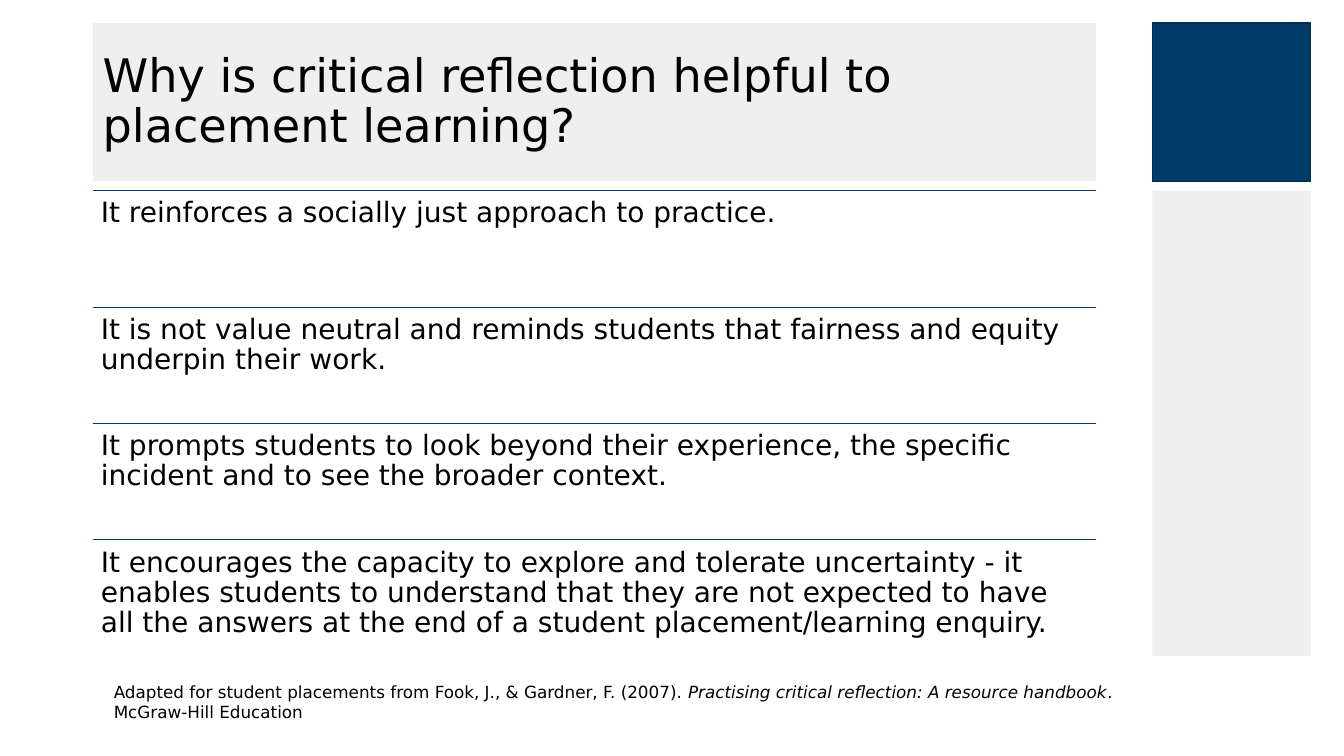
"""Build a slide on why critical reflection helps placement learning."""
from dataclasses import dataclass

from lxml.etree import SubElement
from pptx import Presentation
from pptx.dml.color import RGBColor
from pptx.enum.shapes import MSO_CONNECTOR as Connector, MSO_SHAPE as Preset
from pptx.enum.text import MSO_ANCHOR as Anchor
from pptx.oxml.ns import qn
from pptx.slide import Slide
from pptx.util import Inches, Pt

COLOURS = {"navy": "003C69", "edge": "002C4E", "grey": "EFEFF0", "text": "000000"}
FONT = "DejaVu Sans"
LEFT, WIDTH = 0.92, 9.95
PANEL_LEFT, PANEL_WIDTH = 11.43, 1.57
HEADER_TOP, HEADER_HEIGHT = 0.23, 1.57
BODY_TOP, BODY_HEIGHT = 1.89, 4.62


@dataclass(frozen=True)
class Area:
    left: float
    top: float
    width: float
    height: float

    def lengths(self) -> tuple[Inches, ...]:
        return tuple(Inches(n) for n in (self.left, self.top, self.width, self.height))


@dataclass(frozen=True)
class Panel:
    area: Area
    fill: str
    edge: str | None = None


@dataclass(frozen=True)
class Span:
    text: str
    italic: bool = False


@dataclass(frozen=True)
class TextBlock:
    area: Area
    spans: tuple[Span, ...]
    size: float
    spacing: float = 1.0
    inset: float | None = None
    anchor: Anchor = Anchor.TOP


PANELS = (
    Panel(Area(PANEL_LEFT, BODY_TOP, PANEL_WIDTH, BODY_HEIGHT), "grey"),
    Panel(Area(PANEL_LEFT, HEADER_TOP, PANEL_WIDTH, HEADER_HEIGHT), "navy", "edge"),
    Panel(Area(LEFT, HEADER_TOP, WIDTH, HEADER_HEIGHT), "grey"),
)
TITLE = TextBlock(
    Area(LEFT, HEADER_TOP, WIDTH, HEADER_HEIGHT),
    (Span("Why is critical reflection helpful to placement learning?"),),
    size=33, spacing=0.9, anchor=Anchor.MIDDLE,
)
REASONS = (
    "It reinforces a socially just approach to practice.",
    "It is not value neutral and reminds students that fairness and equity underpin their work.",
    "It prompts students to look beyond their experience, the specific incident "
    "and to see the broader context.",
    "It encourages the capacity to explore and tolerate uncertainty - it enables students "
    "to understand that they are not expected to have all the answers at the end of "
    "a student placement/learning enquiry.",
)
REFERENCE = TextBlock(
    Area(1.03, 6.71, 10.61, 0.5),
    (
        Span("Adapted for student placements from Fook, J., & Gardner, F. (2007). "),
        Span("Practising critical reflection: A resource handbook", italic=True),
        Span(". McGraw-Hill Education"),
    ),
    size=12,
)


def colour(name: str) -> RGBColor:
    return RGBColor.from_string(COLOURS[name])


def draw_panel(page: Slide, panel: Panel) -> None:
    shape = page.shapes.add_shape(Preset.RECTANGLE, *panel.area.lengths())
    shape.shadow.inherit = False
    shape.fill.solid()
    shape.fill.fore_color.rgb = colour(panel.fill)
    if panel.edge:
        shape.line.color.rgb = colour(panel.edge)
        shape.line.width = Pt(1)
    else:
        shape.line.fill.background()


def draw_text(page: Slide, block: TextBlock) -> None:
    box = page.shapes.add_textbox(*block.area.lengths())
    frame = box.text_frame
    frame.word_wrap = True
    frame.vertical_anchor = block.anchor
    if block.inset is not None:
        frame.margin_left = frame.margin_right = Inches(block.inset)
        frame.margin_top = frame.margin_bottom = Inches(block.inset)
    para = frame.paragraphs[0]
    para.line_spacing = block.spacing
    para.font.name = FONT
    para.font.size = Pt(block.size)
    para.font.color.rgb = colour("text")
    for span in block.spans:
        run = para.add_run()
        run.text = span.text
        if span.italic:
            run.font.italic = True


def draw_rule(page: Slide, top: float) -> None:
    rule = page.shapes.add_connector(
        Connector.STRAIGHT, Inches(LEFT), Inches(top), Inches(LEFT + WIDTH), Inches(top)
    )
    rule.line.color.rgb = colour("navy")
    rule.line.width = Pt(0.5)
    SubElement(rule.element.spPr, qn("a:effectLst"))


def draw_reasons(page: Slide) -> None:
    height = BODY_HEIGHT / len(REASONS)
    for index, reason in enumerate(REASONS):
        top = BODY_TOP + index * height
        draw_rule(page, top)
        area = Area(LEFT, top, WIDTH, height)
        draw_text(page, TextBlock(area, (Span(reason),), size=20, spacing=0.9, inset=0.08))


def main() -> None:
    deck = Presentation()
    deck.slide_width, deck.slide_height = Inches(13.33), Inches(7.5)
    page = deck.slides.add_slide(deck.slide_layouts[6])
    for panel in PANELS:
        draw_panel(page, panel)
    draw_text(page, TITLE)
    draw_reasons(page)
    draw_text(page, REFERENCE)
    deck.save("out.pptx")


if __name__ == "__main__":
    main()
